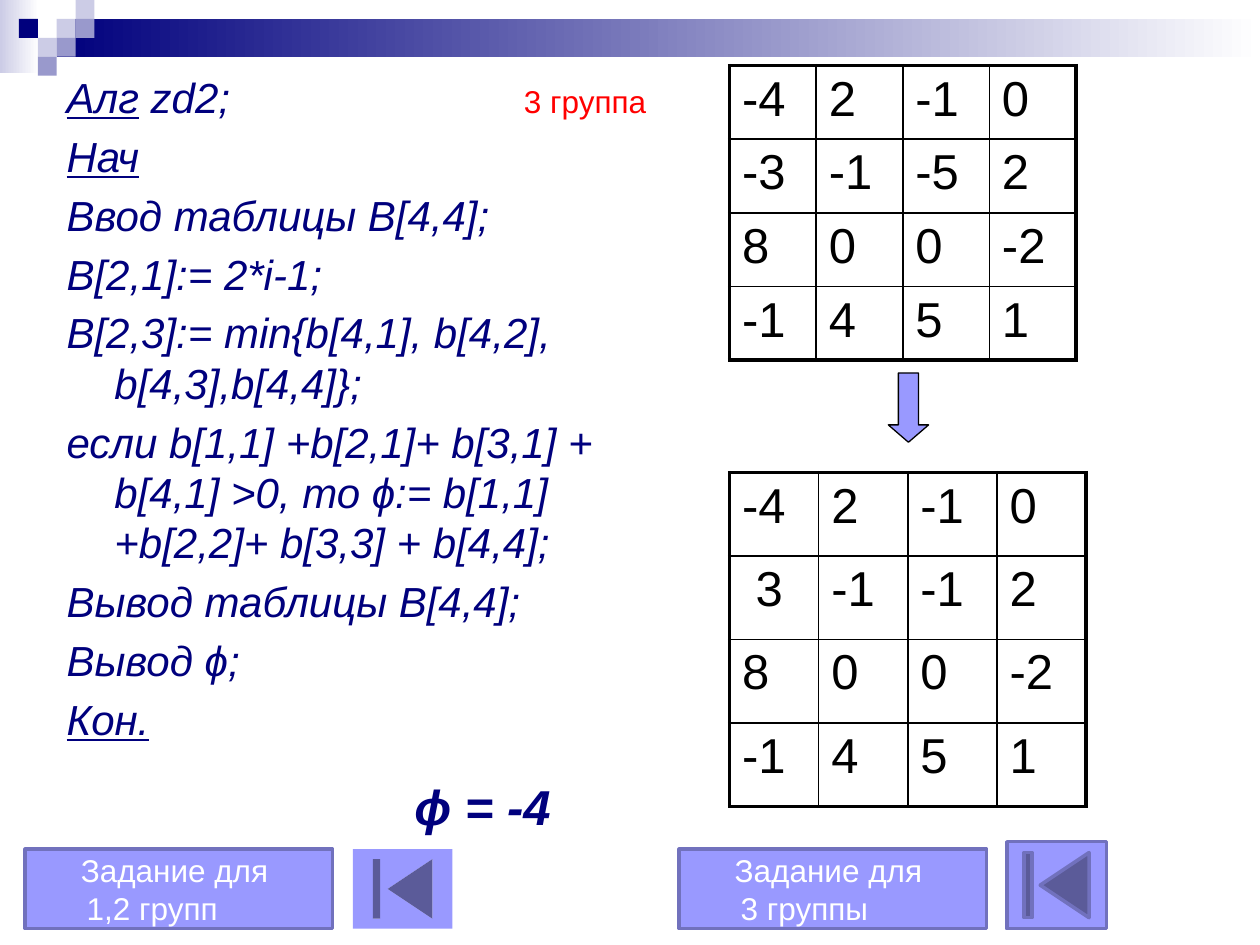
from dataclasses import dataclass

from lxml import etree
from pptx import Presentation
from pptx import util as u
from pptx.dml.color import RGBColor
from pptx.enum import shapes, text
from pptx.oxml.ns import qn


@dataclass(frozen=True)
class Theme:
    font: str = "Arial"
    navy: str = "00007D"
    lilac: str = "9999CC"
    pale: str = "CCCCE6"
    white: str = "FFFFFF"
    black: str = "000000"
    red: str = "FF0000"
    button: str = "9999FF"
    button_edge: str = "7171BD"
    code_size: float = 24
    large_size: float = 28
    label_size: float = 18
    outer_border: float = 2.25
    inner_border: float = 1


THEME = Theme()
SHAPE = shapes.MSO_SHAPE

# Each paragraph is a list of (text, underlined) runs.
ALGORITHM = [
    [("Алг", True), (" zd2;", False)],
    [("Нач", True)],
    [("Ввод таблицы В[4,4];", False)],
    [("B[2,1]:= 2*i-1;", False)],
    [("B[2,3]:= min{b[4,1], b[4,2], b[4,3],b[4,4]};", False)],
    [("если b[1,1] +b[2,1]+ b[3,1] + b[4,1] >0, то ϕ:= b[1,1] "
      "+b[2,2]+ b[3,3] + b[4,4];", False)],
    [("Вывод таблицы B[4,4];", False)],
    [("Вывод ϕ;", False)],
    [("Кон.", True)],
]
MATRIX_BEFORE = [["-4", "2", "-1", "0"], ["-3", "-1", "-5", "2"],
                 ["8", "0", "0", "-2"], ["-1", "4", "5", "1"]]
MATRIX_AFTER = [["-4", "2", "-1", "0"], [" 3", "-1", "-1", "2"],
                ["8", "0", "0", "-2"], ["-1", "4", "5", "1"]]


def rgb(color):
    return RGBColor.from_string(color)


def inches(values):
    return [u.Inches(value) for value in values]


def add_run(paragraph, words, size, color, bold=False, italic=False, underline=False):
    run = paragraph.add_run()
    run.text = words
    font = run.font
    font.name, font.size = THEME.font, u.Pt(size)
    font.bold, font.italic, font.underline = bold, italic, underline
    font.color.rgb = rgb(color)


def set_indent(paragraph, left, first):
    properties = paragraph._p.get_or_add_pPr()
    properties.set("marL", str(u.Inches(left)))
    properties.set("indent", str(u.Inches(first)))


def next_paragraph(frame, index):
    return frame.add_paragraph() if index else frame.paragraphs[0]


def add_box(slide, kind, box, fill, line=None, width=0.75):
    shape = slide.shapes.add_shape(kind, *inches(box))
    shape.shadow.inherit = False
    shape.fill.solid()
    shape.fill.fore_color.rgb = rgb(fill)
    if line:
        shape.line.color.rgb = rgb(line)
        shape.line.width = u.Pt(width)
    else:
        shape.line.fill.background()
    return shape


def add_fading_bar(slide, box, color):
    fill = add_box(slide, SHAPE.RECTANGLE, box, color).fill
    fill.gradient()
    fill.gradient_angle = 0
    for stop, stop_color in zip(fill.gradient_stops, (color, THEME.white)):
        stop.color.rgb = rgb(stop_color)


def add_banner(slide):
    add_fading_bar(slide, (0, 0, 0.31, 0.58), THEME.pale)
    add_fading_bar(slide, (0.45, 0.15, 9.55, 0.3), THEME.navy)
    side = 0.15
    squares = [(3, 1, THEME.pale), (4, 0, THEME.pale), (4, 1, THEME.lilac),
               (2, 2, THEME.pale), (1, 1, THEME.navy), (3, 2, THEME.lilac),
               (2, 3, THEME.lilac)]
    for column, row, color in squares:
        add_box(slide, SHAPE.RECTANGLE, (column * side, row * side, side, side), color)


def add_algorithm(slide):
    frame = slide.shapes.add_textbox(*inches((0.43, 0.52, 4.42, 5.9))).text_frame
    frame.word_wrap = True
    for index, runs in enumerate(ALGORITHM):
        paragraph = next_paragraph(frame, index)
        set_indent(paragraph, 0.38, -0.38)
        paragraph.line_spacing = u.Pt(28.8)
        if index:
            paragraph.space_before = u.Pt(4.8)
        for words, underline in runs:
            add_run(paragraph, words, THEME.code_size, THEME.navy,
                    italic=True, underline=underline)


def add_label(slide, box, words, size, color, wrap=True, **style):
    frame = slide.shapes.add_textbox(*inches(box)).text_frame
    frame.word_wrap = wrap
    add_run(frame.paragraphs[0], words, size, color, **style)


def set_border(cell, side, width):
    line = etree.SubElement(cell._tc.get_or_add_tcPr(), qn(f"a:ln{side}"),
                            w=str(u.Pt(width)))
    fill = etree.SubElement(line, qn("a:solidFill"))
    etree.SubElement(fill, qn("a:srgbClr"), val=THEME.black)


def add_matrix(slide, box, values):
    """Draw a square grid with a heavier outer frame."""
    count = len(values)
    table = slide.shapes.add_table(count, count, *inches(box)).table
    table.first_row = table.horz_banding = False
    for track in table.columns:
        track.width = u.Inches(box[2] / count)
    for track in table.rows:
        track.height = u.Inches(box[3] / count)
    for row, row_values in enumerate(values):
        for column, value in enumerate(row_values):
            cell = table.cell(row, column)
            outer_sides = {"L": column == 0, "R": column == count - 1,
                           "T": row == 0, "B": row == count - 1}
            for side, is_outer in outer_sides.items():
                set_border(cell, side,
                           THEME.outer_border if is_outer else THEME.inner_border)
            cell.fill.background()
            add_run(cell.text_frame.paragraphs[0], value,
                    THEME.large_size, THEME.black)


def add_task_button(slide, left, group):
    shape = add_box(slide, SHAPE.FLOWCHART_PROCESS, (left, 6.74, 2.44, 0.63),
                    THEME.button, THEME.button_edge, 2)
    frame = shape.text_frame
    frame.word_wrap = True
    frame.vertical_anchor = text.MSO_ANCHOR.MIDDLE
    lines = [("Задание для ", text.PP_ALIGN.CENTER, 0), (group, text.PP_ALIGN.LEFT, 0.39)]
    for index, (words, alignment, first) in enumerate(lines):
        paragraph = next_paragraph(frame, index)
        paragraph.alignment = alignment
        set_indent(paragraph, 0, first)
        add_run(paragraph, words, THEME.label_size, THEME.white)


def main():
    presentation = Presentation()
    presentation.slide_width, presentation.slide_height = inches((10, 7.5))
    slide = presentation.slides.add_slide(presentation.slide_layouts[6])

    add_banner(slide)
    add_algorithm(slide)
    add_matrix(slide, (5.79, 0.52, 2.75, 2.34), MATRIX_BEFORE)
    add_label(slide, (4.06, 0.6, 1.18, 0.4), "3 группа", THEME.label_size,
              THEME.red, wrap=False)
    arrow = add_box(slide, SHAPE.DOWN_ARROW, (7.05, 2.96, 0.32, 0.55),
                    THEME.button, THEME.black)
    arrow.adjustments[1] = 0.43
    add_matrix(slide, (5.79, 3.75, 2.83, 2.65), MATRIX_AFTER)
    add_label(slide, (3.19, 6.11, 1.89, 0.57), "ϕ = -4", THEME.large_size,
              THEME.navy, bold=True, italic=True)

    add_box(slide, SHAPE.ACTION_BUTTON_BEGINNING, (2.8, 6.74, 0.79, 0.63), THEME.button)
    add_task_button(slide, 0.2, "1,2 групп")
    add_task_button(slide, 5.39, "3 группы")
    add_box(slide, SHAPE.ACTION_BUTTON_BEGINNING, (7.99, 6.68, 0.79, 0.69),
            THEME.button, THEME.button_edge, 2)

    presentation.save("out.pptx")


if __name__ == "__main__":
    main()
